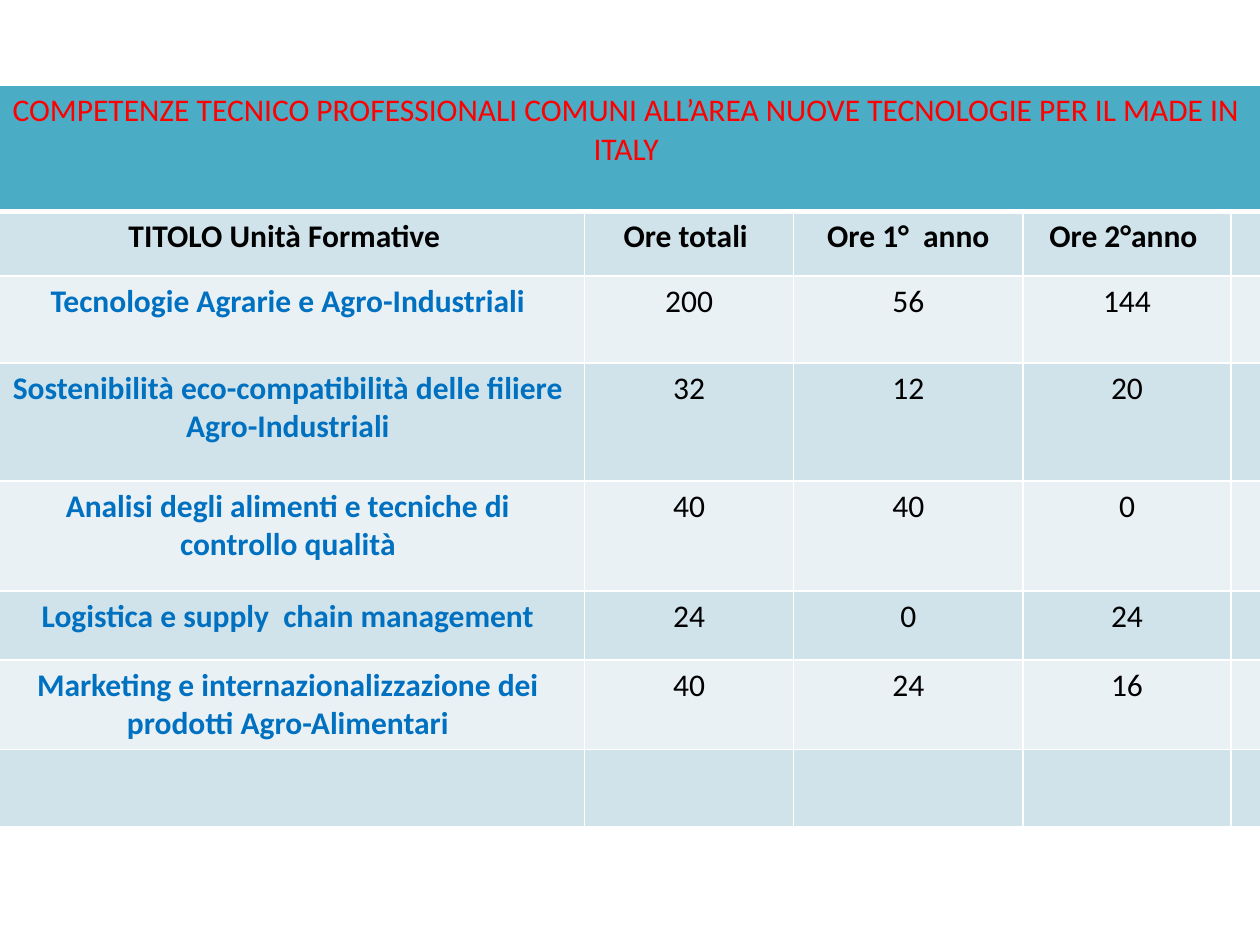
"""Build the slide with the table of training units and their hours."""
from dataclasses import dataclass
from typing import NamedTuple

from lxml.etree import SubElement
from pptx import Presentation
from pptx.dml.color import RGBColor
from pptx.enum.text import PP_ALIGN
from pptx.oxml.ns import qn
from pptx.table import Table, _Cell
from pptx.util import Inches, Pt


@dataclass(frozen=True)
class Theme:
    font: str = "Calibri"
    size: int = 18
    banner: str = "4BACC6"
    bands: tuple[str, str] = ("D0E3EA", "E9F1F5")
    border: str = "FFFFFF"
    title: str = "FF0000"
    unit: str = "0070C0"
    text: str = "000000"
    thin: float = 1
    thick: float = 3


class Row(NamedTuple):
    height: float
    labels: tuple[str, ...] = ()


THEME = Theme()
LEFT, TOP = -0.07, 0.68
COLUMNS = (4.71, 1.66, 1.82, 1.65, 0.23)
ROWS = (
    Row(1.0, ("COMPETENZE TECNICO PROFESSIONALI COMUNI ALL’AREA "
              "NUOVE TECNOLOGIE PER IL MADE IN ITALY",)),
    Row(0.51, ("TITOLO Unità Formative ", "Ore totali ", "Ore 1°  anno", "Ore 2°anno ")),
    Row(0.69, ("Tecnologie Agrarie e Agro-Industriali", "200", "56", "144")),
    Row(0.94, ("Sostenibilità eco-compatibilità delle filiere Agro-Industriali",
               "32", "12", "20")),
    Row(0.87, ("Analisi degli alimenti e tecniche di controllo qualità", "40", "40", "0")),
    Row(0.55, ("Logistica e supply  chain management", "24", "0", "24")),
    Row(0.71, ("Marketing e internazionalizzazione dei prodotti Agro-Alimentari",
               "40", "24", "16")),
    Row(0.61),
)


def draw_borders(cell: _Cell, row: int) -> None:
    """Outline a cell, with a thick rule under the banner."""
    thick_side = {0: "lnB", 1: "lnT"}.get(row)
    properties = cell._tc.get_or_add_tcPr()
    for side in ("lnL", "lnR", "lnT", "lnB"):
        width = THEME.thick if side == thick_side else THEME.thin
        line = SubElement(properties, qn(f"a:{side}"), w=str(Pt(width)))
        fill = SubElement(line, qn("a:solidFill"))
        SubElement(fill, qn("a:srgbClr"), val=THEME.border)


def fill_cell(cell: _Cell, row: int) -> None:
    """Colour a cell as banner or as one of the alternating bands."""
    colour = THEME.banner if row == 0 else THEME.bands[(row - 1) % 2]
    cell.fill.solid()
    cell.fill.fore_color.rgb = RGBColor.from_string(colour)


def write_label(cell: _Cell, label: str, row: int, column: int) -> None:
    """Write centred text styled by its role in the table."""
    cell.text_frame.text = label
    paragraph = cell.text_frame.paragraphs[0]
    paragraph.alignment = PP_ALIGN.CENTER
    if row == 0:
        colour = THEME.title
    elif row > 1 and column == 0:
        colour = THEME.unit
    else:
        colour = THEME.text
    for run in paragraph.runs:
        run.font.name = THEME.font
        run.font.size = Pt(THEME.size)
        run.font.bold = row == 1 or (row > 1 and column == 0)
        run.font.color.rgb = RGBColor.from_string(colour)


def draw_table(table: Table) -> None:
    """Size the grid, then style and fill each cell."""
    table.first_row = table.horz_banding = False
    for column, width in zip(table.columns, COLUMNS):
        column.width = Inches(width)
    for row, entry in enumerate(ROWS):
        table.rows[row].height = Inches(entry.height)
        for column in range(len(COLUMNS)):
            cell = table.cell(row, column)
            draw_borders(cell, row)
            fill_cell(cell, row)
        for column, label in enumerate(entry.labels):
            write_label(table.cell(row, column), label, row, column)
    table.cell(0, 0).merge(table.cell(0, len(COLUMNS) - 1))


def main() -> None:
    """Create the presentation and save it."""
    presentation = Presentation()
    presentation.slide_width, presentation.slide_height = Inches(10), Inches(7.5)
    slide = presentation.slides.add_slide(presentation.slide_layouts[6])
    frame = slide.shapes.add_table(
        len(ROWS), len(COLUMNS), Inches(LEFT), Inches(TOP),
        Inches(sum(COLUMNS)), Inches(sum(row.height for row in ROWS)))
    draw_table(frame.table)
    presentation.save("out.pptx")


if __name__ == "__main__":
    main()
